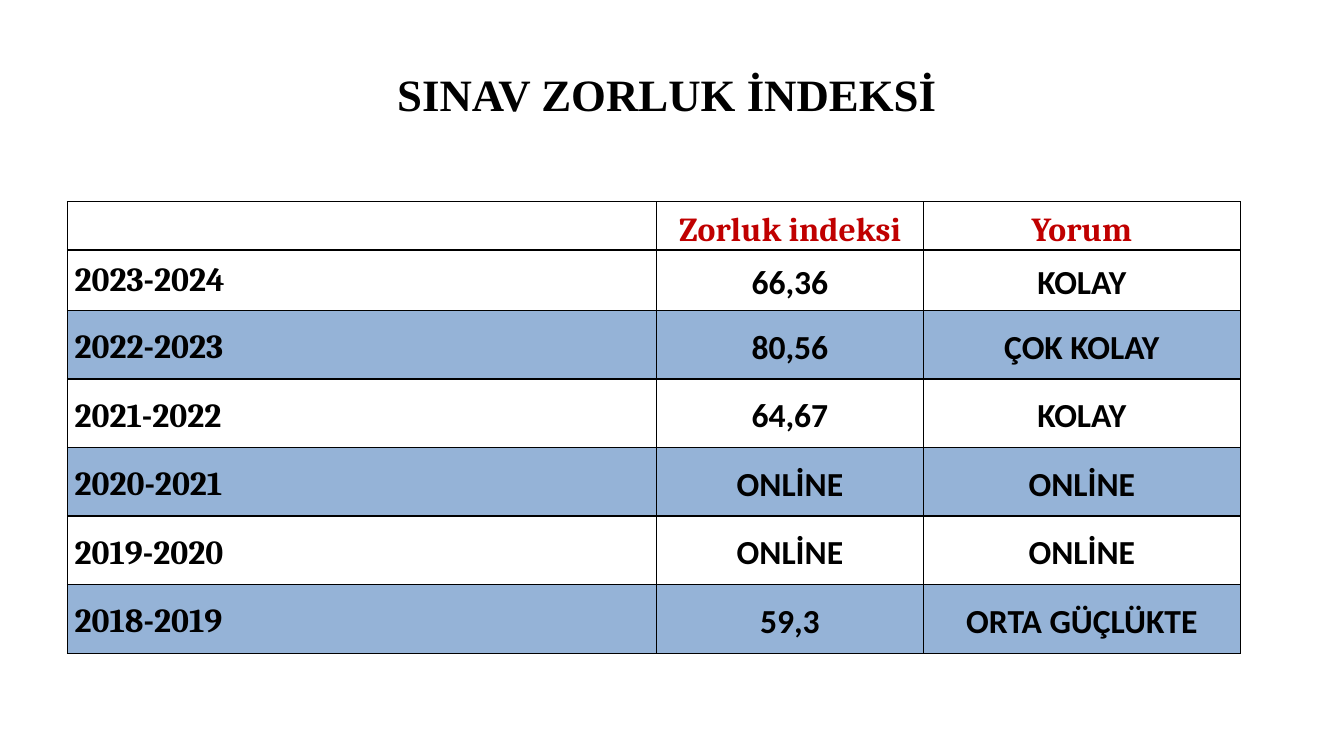
from lxml import etree
from pptx import Presentation
from pptx import util as u
from pptx.dml.color import RGBColor
from pptx.enum import text
from pptx.oxml import ns

COLORS = {"ink": "000000", "header": "C00000", "band": "95B3D7"}
COLUMN_WIDTHS = [5.84, 2.65, 3.14]
ROW_HEIGHTS = [0.48, 0.6] + [0.68] * 5
THIN, THICK = 1, 2.25
ROWS = [
    ("", "Zorluk indeksi", "Yorum"),
    ("2023-2024", "66,36", "KOLAY"),
    ("2022-2023", "80,56", "ÇOK KOLAY"),
    ("2021-2022", "64,67", "KOLAY"),
    ("2020-2021", "ONLİNE", "ONLİNE"),
    ("2019-2020", "ONLİNE", "ONLİNE"),
    ("2018-2019", "59,3", " ORTA GÜÇLÜKTE "),
]


def style_paragraph(paragraph, font_name, size, color, centered):
    paragraph.alignment = text.PP_ALIGN.CENTER if centered else text.PP_ALIGN.LEFT
    for run in paragraph.runs:
        run.font.name = font_name
        run.font.size = u.Pt(size)
        run.font.bold = True
        run.font.color.rgb = RGBColor.from_string(COLORS[color])


def add_title(slide, left, top, width, height):
    title = slide.shapes.add_textbox(*map(u.Inches, (left, top, width, height)))
    frame = title.text_frame
    frame.word_wrap = True
    frame.vertical_anchor = text.MSO_ANCHOR.MIDDLE
    frame.text = "SINAV ZORLUK İNDEKSİ "
    style_paragraph(frame.paragraphs[0], "Times New Roman", 32, "ink", True)


def set_borders(cell, top, bottom):
    """Draw all four cell edges; the borders must precede the fill in tcPr."""
    properties = cell._tc.get_or_add_tcPr()
    edges = {"lnL": THIN, "lnR": THIN, "lnT": top, "lnB": bottom}
    for position, (edge, width) in enumerate(edges.items()):
        line = etree.Element(ns.qn(f"a:{edge}"), w=str(u.Pt(width)))
        fill = etree.SubElement(line, ns.qn("a:solidFill"))
        etree.SubElement(fill, ns.qn("a:srgbClr"), val=COLORS["ink"])
        properties.insert(position, line)


def format_cell(cell, row, column):
    is_header, is_year = row == 0, column == 0
    if row and row % 2 == 0:
        cell.fill.solid()
        cell.fill.fore_color.rgb = RGBColor.from_string(COLORS["band"])
    else:
        cell.fill.background()
    set_borders(cell, THICK if row == 1 else THIN, THICK if is_header else THIN)
    cell.margin_left = cell.margin_right = u.Inches(0.07)
    cell.margin_top = cell.margin_bottom = 0
    anchors = text.MSO_ANCHOR
    cell.vertical_anchor = anchors.BOTTOM if is_header else anchors.MIDDLE
    paragraph = cell.text_frame.paragraphs[0]
    if not (row == 1 and is_year):
        paragraph.line_spacing = 1.15
    style_paragraph(paragraph, "Cambria" if is_header or is_year else "Calibri",
                    24, "header" if is_header else "ink", not is_year)


def add_difficulty_table(slide, left, top):
    size = sum(COLUMN_WIDTHS), sum(ROW_HEIGHTS)
    table = slide.shapes.add_table(len(ROWS), len(COLUMN_WIDTHS),
                                   *map(u.Inches, (left, top, *size))).table
    table.horz_banding = False
    for column, width in zip(table.columns, COLUMN_WIDTHS):
        column.width = u.Inches(width)
    for row, height in zip(table.rows, ROW_HEIGHTS):
        row.height = u.Inches(height)
    for row, values in enumerate(ROWS):
        for column, value in enumerate(values):
            cell = table.cell(row, column)
            cell.text_frame.text = value
            format_cell(cell, row, column)


def main():
    presentation = Presentation()
    presentation.slide_width = u.Inches(13.33)
    presentation.slide_height = u.Inches(7.5)
    slide = presentation.slides.add_slide(presentation.slide_layouts[6])
    add_title(slide, 0.67, 0.3, 12, 1.25)
    add_difficulty_table(slide, 0.67, 2)
    presentation.save("out.pptx")


if __name__ == "__main__":
    main()
